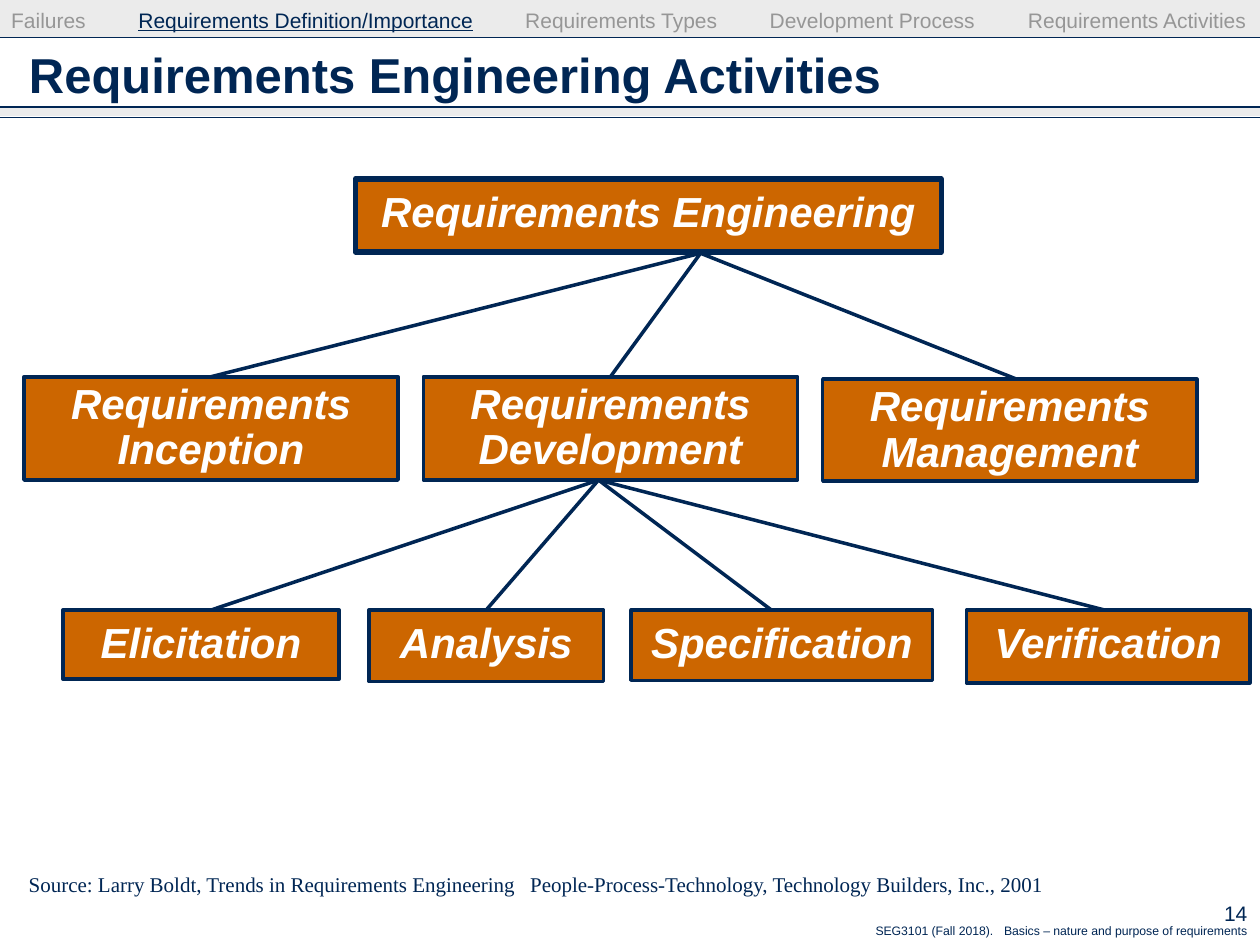
from dataclasses import dataclass
from typing import Optional

import pptx
import pptx.dml.color
import pptx.enum.shapes
import pptx.enum.text
import pptx.oxml.ns
import pptx.util
from lxml import etree

Inches = pptx.util.Inches
Pt = pptx.util.Pt
qn = pptx.oxml.ns.qn
Align = pptx.enum.text.PP_ALIGN
Anchor = pptx.enum.text.MSO_ANCHOR
RECTANGLE = pptx.enum.shapes.MSO_SHAPE.RECTANGLE
STRAIGHT = pptx.enum.shapes.MSO_CONNECTOR.STRAIGHT


@dataclass(frozen=True)
class Theme:
    navy: str = "002654"
    grey: str = "969696"
    band: str = "CDCDCD"
    orange: str = "CC6600"
    white: str = "FFFFFF"
    sans: str = "Arial"
    serif: str = "Times New Roman"
    title: float = 28
    node: float = 24
    small: float = 12
    footer: float = 7
    rule: float = 0.75
    line: float = 2
    root_line: float = 3


@dataclass(frozen=True)
class Node:
    text: str
    left: float
    top: float
    width: float
    height: float
    end_x: Optional[float] = None  # where the link lands; None joins the top middle
    border: float = 2
    spacing: float = 1.0


THEME = Theme()

ROOT = Node("Requirements Engineering", 2.82, 1.42, 4.65, 0.58, border=THEME.root_line)
AREAS = [
    Node("Requirements Inception", 0.19, 2.99, 2.97, 0.82, spacing=0.9),
    Node("Requirements Development", 3.36, 2.99, 2.97, 0.82, spacing=0.9),
    Node("Requirements Management", 6.53, 3.01, 2.97, 0.81, 8.07, spacing=0.9),
]
STEPS = [
    Node("Elicitation", 0.5, 4.84, 2.19, 0.55, 1.68),
    Node("Analysis", 2.93, 4.84, 1.86, 0.57),
    Node("Specification", 5.01, 4.84, 2.39, 0.56, 6.12),
    Node("Verification", 7.67, 4.84, 2.25, 0.58, 8.76),
]
# Each level fans out from one point: (x, y, nodes)
LEVELS = [(5.56, 2.01, AREAS), (4.75, 3.81, STEPS)]

SECTIONS = ["Failures", "Requirements Definition/Importance", "Requirements Types",
            "Development Process", "Requirements Activities"]
CURRENT = 1
SECTION_TABS = [1.01, 4.08, 6.02, 8.07]


def rgb(color: str) -> pptx.dml.color.RGBColor:
    return pptx.dml.color.RGBColor.from_string(color)


def style(r, size: float, color: str, font: str = THEME.sans) -> None:
    r.font.size = Pt(size)
    r.font.name = font
    r.font.color.rgb = rgb(color)


def set_tabs(p, stops: list[float]) -> None:
    tabs = etree.SubElement(p._p.get_or_add_pPr(), qn("a:tabLst"))
    for stop in stops:
        etree.SubElement(tabs, qn("a:tab"), pos=str(Inches(stop)), algn="l")


def add_text(s, left: float, top: float, width: float, height: float):
    """Add a text box and return its first paragraph."""
    tf = s.shapes.add_textbox(Inches(left), Inches(top), Inches(width), Inches(height)).text_frame
    tf.word_wrap = True
    tf.margin_right = 0
    return tf.paragraphs[0]


def add_line(s, x1: float, y1: float, x2: float, y2: float, width: float):
    line = s.shapes.add_connector(STRAIGHT, Inches(x1), Inches(y1), Inches(x2), Inches(y2))
    line.line.color.rgb = rgb(THEME.navy)
    line.line.width = Pt(width)
    etree.SubElement(line._element.spPr, qn("a:effectLst"))
    return line


def add_band(s, top: float, height: float) -> None:
    sp = s.shapes.add_shape(RECTANGLE, 0, Inches(top), Inches(10), Inches(height))
    sp.shadow.inherit = False
    sp.fill.solid()
    sp.fill.fore_color.rgb = rgb(THEME.band)
    color = sp._element.spPr.find(qn("a:solidFill")).find(qn("a:srgbClr"))
    etree.SubElement(color, qn("a:alpha"), val="40000")
    sp.line.fill.background()


def add_node(s, node: Node):
    sp = s.shapes.add_shape(RECTANGLE, Inches(node.left), Inches(node.top),
                            Inches(node.width), Inches(node.height))
    sp.shadow.inherit = False
    sp.fill.solid()
    sp.fill.fore_color.rgb = rgb(THEME.orange)
    sp.line.color.rgb = rgb(THEME.navy)
    sp.line.width = Pt(node.border)
    tf = sp.text_frame
    tf.word_wrap = True
    tf.vertical_anchor = Anchor.TOP
    tf.text = node.text
    p = tf.paragraphs[0]
    p.alignment = Align.CENTER
    p.line_spacing = node.spacing
    r = p.runs[0]
    style(r, THEME.node, THEME.white)
    r.font.bold = r.font.italic = True
    return sp


def add_navigation(s) -> None:
    p = add_text(s, -0.01, 0.01, 10.02, 0.29)
    set_tabs(p, SECTION_TABS)
    for i, section in enumerate(SECTIONS):
        if i:
            r = p.add_run()
            r.text = "\t"
            style(r, THEME.small, THEME.grey)
        r = p.add_run()
        r.text = section
        style(r, THEME.small, THEME.navy if i == CURRENT else THEME.grey)
        r.font.underline = i == CURRENT


def add_tabbed(s, box: tuple, text: str, stop: float, size: float, font: str) -> None:
    p = add_text(s, *box)
    set_tabs(p, [stop])
    r = p.add_run()
    r.text = text
    style(r, size, THEME.navy, font)


def main() -> None:
    prs = pptx.Presentation()
    prs.slide_width, prs.slide_height = Inches(10), Inches(7.5)
    s = prs.slides.add_slide(prs.slide_layouts[5])

    # Header bands and rules
    add_band(s, 0, 0.3)
    add_band(s, 0.85, 0.07)
    for y in (0.3, 0.85, 0.93):
        add_line(s, 0, y, 10, y, THEME.rule)
    add_navigation(s)

    # Title
    title = s.shapes.title
    title.left, title.top = Inches(0.13), Inches(0.26)
    title.width, title.height = Inches(9.74), Inches(0.66)
    tf = title.text_frame
    tf.text = "Requirements Engineering Activities"
    tf.vertical_anchor = Anchor.MIDDLE
    p = tf.paragraphs[0]
    p.alignment = Align.LEFT
    style(p.runs[0], THEME.title, THEME.navy)
    p.runs[0].font.bold = True

    # Activity tree
    add_node(s, ROOT)
    for x, y, nodes in LEVELS:
        for node in nodes:
            sp = add_node(s, node)
            end_x = node.end_x or node.left + node.width / 2
            link = add_line(s, x, y, end_x, node.top, THEME.line)
            if node.end_x is None:
                link.end_connect(sp, 0)

    # Source, slide number and footer
    add_tabbed(s, (0.13, 6.87, 8.33, 0.3),
               "Source: Larry Boldt, Trends in Requirements Engineering\t"
               "People-Process-Technology, Technology Builders, Inc., 2001",
               3.98, THEME.small, THEME.serif)
    add_tabbed(s, (6.85, 7.28, 3.15, 0.22),
               "SEG3101 (Fall 2018).\tBasics – nature and purpose of requirements",
               1.02, THEME.footer, THEME.sans)
    p = add_text(s, 9.3, 7.1, 0.6, 0.3)
    p.text = "14"
    p.alignment = Align.RIGHT
    style(p.runs[0], THEME.small, THEME.navy)

    prs.save("out.pptx")


if __name__ == "__main__":
    main()
